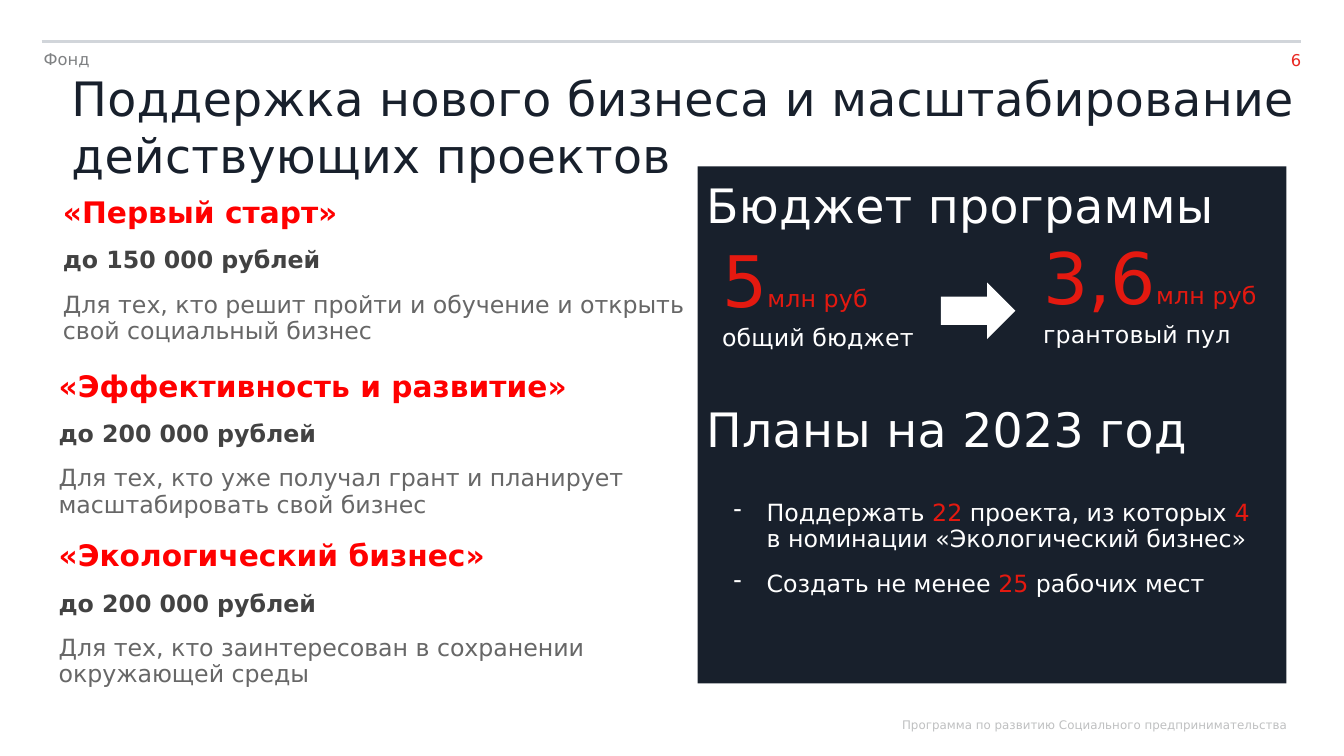
from lxml.etree import SubElement
from pptx import Presentation
from pptx.dml.color import RGBColor
from pptx.enum.shapes import MSO_CONNECTOR as Connector, MSO_SHAPE as Shape
from pptx.enum.text import MSO_ANCHOR as Anchor, MSO_AUTO_SIZE as AutoSize, PP_ALIGN as Align
from pptx.oxml.ns import qn
from pptx.util import Inches, Pt

FONT = "DejaVu Sans"
NAVY = RGBColor(0x18, 0x20, 0x2C)
WHITE = RGBColor(0xFF, 0xFF, 0xFF)
RED = RGBColor(0xE4, 0x19, 0x10)
NUMBER_RED = RGBColor(0xE9, 0x27, 0x21)
BRIGHT_RED = RGBColor(0xFF, 0x00, 0x00)
DARK_GREY = RGBColor(0x42, 0x42, 0x42)
TEXT_GREY = RGBColor(0x67, 0x67, 0x67)
LABEL_GREY = RGBColor(0x7F, 0x81, 0x83)
PALE_GREY = RGBColor(0xBF, 0xC0, 0xC1)
LINE_GREY = RGBColor(0xD1, 0xD5, 0xDA)

HEADING = {"size": 32, "color": WHITE, "spacing": 20}
BODY = {"line_spacing": Pt(17.8), "space_before": Pt(12)}
GRANTS = [
    (0.57, 1.66, 5.92, "«Первый старт»", "до 150 000 рублей",
     "Для тех, кто решит пройти и обучение и открыть свой социальный бизнес"),
    (0.53, 3.29, 6.08, "«Эффективность и развитие»", "до 200 000 рублей",
     "Для тех, кто уже получал грант и планирует масштабировать свой бизнес"),
    (0.53, 4.88, 6.08, "«Экологический бизнес»", "до 200 000 рублей",
     "Для тех, кто заинтересован в сохранении окружающей среды"),
]
BUDGETS = [
    (0.22, 1.16, 2.28, "5", "общий бюджет"),
    (3.23, 1.13, 2.67, "3,6", "грантовый пул"),
]
PLANS = [
    [("Поддержать ", WHITE), ("22", RED), (" проекта, из которых ", WHITE), ("4", RED),
     (" в номинации «Экологический бизнес»", WHITE)],
    [("Создать не менее ", WHITE), ("25", RED), (" рабочих мест", WHITE)],
]


def add_span(para, text, size, color, bold=False, spacing=0):
    """Append formatted text to a paragraph."""
    span = para.add_run()
    span.text = text
    for name, value in {"name": FONT, "size": Pt(size), "bold": bold}.items():
        setattr(span.font, name, value)
    span.font.color.rgb = color
    if spacing:
        span.font._element.set("spc", str(spacing))


def fill_text(box, paragraphs, insets=(0.1, 0.05, 0.1, 0.05), anchor=Anchor.TOP):
    """Write paragraphs, each a list of spans and a dict of paragraph formats."""
    frame = box.text_frame
    sides = ("margin_left", "margin_top", "margin_right", "margin_bottom")
    formats = {side: Inches(inset) for side, inset in zip(sides, insets)}
    formats.update(word_wrap=True, auto_size=AutoSize.NONE, vertical_anchor=anchor)
    for name, value in formats.items():
        setattr(frame, name, value)
    for index, (spans, para_format) in enumerate(paragraphs):
        para = frame.add_paragraph() if index else frame.paragraphs[0]
        for name, value in para_format.items():
            setattr(para, name, value)
        for text, style in spans:
            add_span(para, text, **style)


def add_text(page, bounds, paragraphs, **options):
    """Add a text box at the given bounds in inches."""
    box = page.shapes.add_textbox(*map(Inches, bounds))
    fill_text(box, paragraphs, **options)
    return box


def add_solid(page, kind, bounds, color):
    """Add a filled shape without outline or shadow."""
    shape = page.shapes.add_shape(kind, *map(Inches, bounds))
    shape.shadow.inherit = False
    shape.fill.solid()
    shape.fill.fore_color.rgb = color
    shape.line.fill.background()


def add_header(page, left, top, width):
    """Add the rule, the label, the page number and the title."""
    rule = page.shapes.add_connector(
        Connector.STRAIGHT, *map(Inches, (left, top, left + width, top)))
    rule.line.color.rgb = LINE_GREY
    rule.line.width = Pt(1.5)
    SubElement(rule._element.spPr, qn("a:effectLst"))
    add_text(page, (left - 0.08, top + 0.02, 2.68, 0.3),
             [([("Фонд", {"size": 11, "color": LABEL_GREY})], {})])
    add_text(page, (left + width - 0.73, top + 0.02, 0.73, 0.3),
             [([("6", {"size": 11, "color": NUMBER_RED})], {"alignment": Align.RIGHT})],
             insets=(0, 0, 0, 0), anchor=Anchor.MIDDLE)
    title = page.shapes.title
    bounds = (left + 0.18, top + 0.21, 11.72, 1.16)
    for name, value in zip(("left", "top", "width", "height"), bounds):
        setattr(title, name, Inches(value))
    text = "Поддержка нового бизнеса и масштабирование действующих проектов"
    fill_text(title, [([(text, {**HEADING, "color": NAVY})], {"alignment": Align.LEFT})],
              anchor=Anchor.MIDDLE)


def add_grant(page, left, top, width, name, amount, audience):
    """Add one grant with its amount and audience."""
    add_text(page, (left, top, width, 1.7), [
        ([(name, {"size": 20, "color": BRIGHT_RED, "bold": True})], {}),
        ([(amount, {"size": 16, "color": DARK_GREY, "bold": True})], BODY),
        ([(audience, {"size": 16, "color": TEXT_GREY})], BODY),
    ], insets=(0.02, 0.16, 0, 0))


def add_budget(page, left, top, width, amount, caption):
    """Add a large amount in millions with its caption."""
    lines = {"line_spacing": Pt(20)}
    add_text(page, (left, top, width, 0.58), [
        ([(amount, {"size": 48, "color": RED}),
          ("млн руб", {"size": 16, "color": RED, "spacing": 10})], lines),
        ([(caption, {"size": 16, "color": WHITE, "spacing": 10})], lines),
    ], insets=(0.01, 0.02, 0, 0))


def add_plans(page, left, top, width):
    """Add the list of plans with dash bullets."""
    paragraphs = [([(text, {"size": 16, "color": color}) for text, color in plan], BODY)
                  for plan in PLANS]
    box = add_text(page, (left, top, width, 1.05), paragraphs)
    for para in box.text_frame.paragraphs:
        properties = para._p.get_or_add_pPr()
        properties.set("marL", str(Inches(0.33)))
        properties.set("indent", str(Inches(-0.31)))
        SubElement(properties, qn("a:buChar"), char="-")


def add_panel(page, left, top, width, height):
    """Add the dark panel with the budget and the plans."""
    add_solid(page, Shape.RECTANGLE, (left, top, width, height), NAVY)
    for offset, heading in ((0.06, "Бюджет программы"), (2.16, "Планы на 2023 год")):
        add_text(page, (left, top + offset, width, 0.6), [([(heading, HEADING)], {})],
                 insets=(0.08, 0, 0, 0), anchor=Anchor.MIDDLE)
    for dx, dy, budget_width, amount, caption in BUDGETS:
        add_budget(page, left + dx, top + dy, budget_width, amount, caption)
    add_solid(page, Shape.RIGHT_ARROW, (left + 2.28, top + 1.09, 0.7, 0.53), WHITE)
    add_plans(page, left + 0.22, top + 3.08, 5.15)


def add_footer(page, left, top, width):
    """Add the programme name at the bottom right."""
    text = "Программа по развитию Социального предпринимательства"
    add_text(page, (left, top, width, 0.23),
             [([(text, {"size": 8, "color": PALE_GREY})], {"alignment": Align.RIGHT})])


def main():
    """Build the slide and save the deck."""
    deck = Presentation()
    deck.slide_width, deck.slide_height = Inches(12.6), Inches(7.09)
    page = deck.slides.add_slide(deck.slide_layouts[5])
    add_header(page, 0.39, 0.39, 11.81)
    for grant in GRANTS:
        add_grant(page, *grant)
    add_panel(page, 6.54, 1.56, 5.52, 4.85)
    add_footer(page, 7.65, 6.68, 4.52)
    deck.save("out.pptx")


if __name__ == "__main__":
    main()
